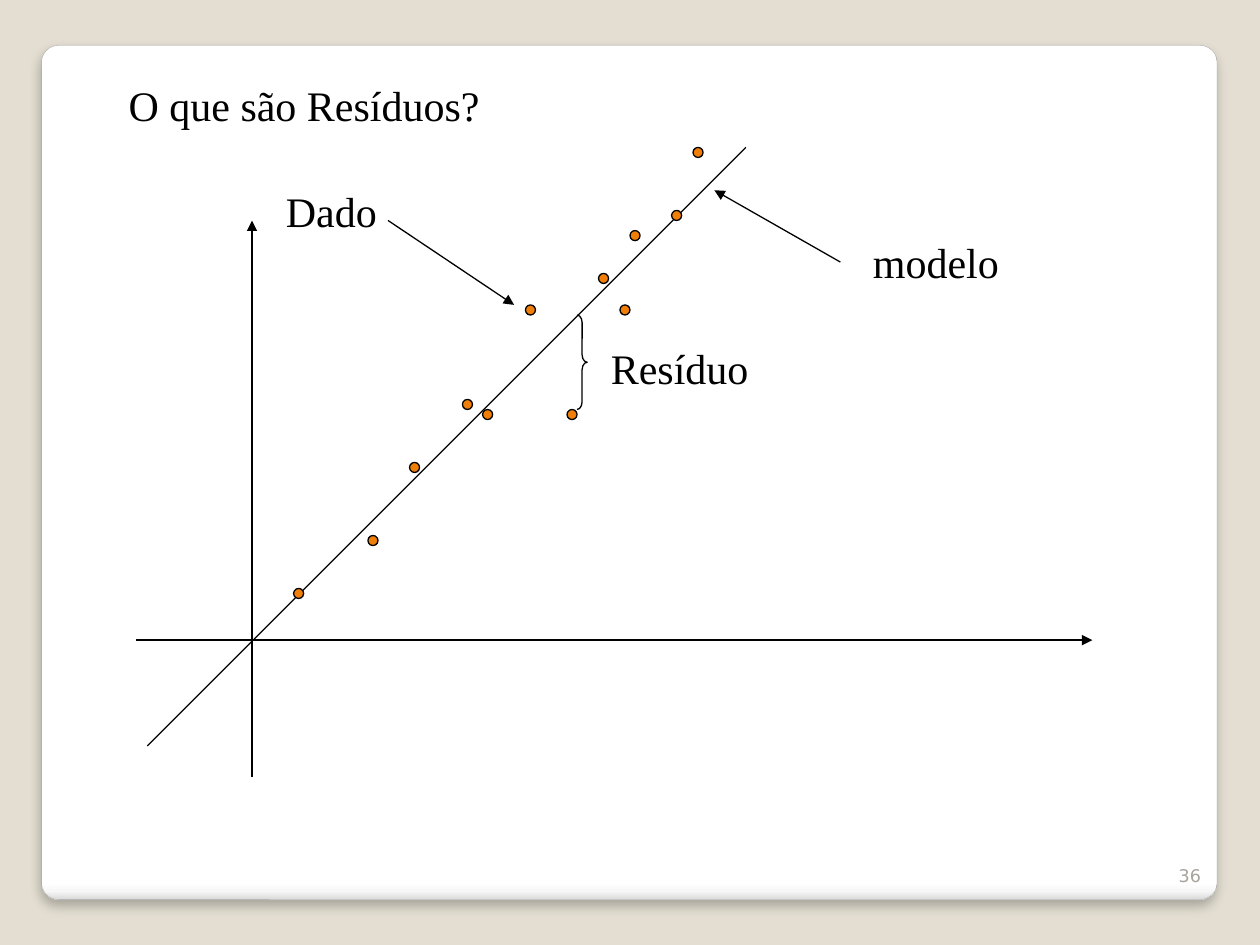
import dataclasses

import lxml.etree
import pptx
import pptx.dml.color
import pptx.enum.shapes
import pptx.enum.text
import pptx.oxml
import pptx.oxml.ns
import pptx.util

Inches = pptx.util.Inches
Pt = pptx.util.Pt
RGB = pptx.dml.color.RGBColor.from_string
SHAPE = pptx.enum.shapes.MSO_SHAPE
ALIGN = pptx.enum.text.PP_ALIGN
ANCHOR = pptx.enum.text.MSO_ANCHOR
qn = pptx.oxml.ns.qn


@dataclasses.dataclass(frozen=True)
class Theme:
    background: str = "E3DED1"
    card_border: str = "A4A4A4"
    card_stops: tuple = ((0, "FFFFFF"), (98, "FFFFFF"), (99, "F7F7F7"), (100, "DADADA"))
    ink: str = "000000"
    muted: str = "A8A49B"
    point: str = "F07F09"
    font: str = "Times New Roman"
    number_font: str = "DejaVu Sans"
    text_size: float = 24
    number_size: float = 10
    line_width: float = 0.75


class SlideBuilder:
    def __init__(self, prs, theme):
        self.theme = theme
        self.s = prs.slides.add_slide(prs.slide_layouts[5])
        fill = self.s.background.fill
        fill.solid()
        fill.fore_color.rgb = RGB(theme.background)

    def outline(self, line, color=None, width=None):
        line.color.rgb = RGB(color or self.theme.ink)
        line.width = Pt(width or self.theme.line_width)

    def shape(self, kind, x, y, w, h, color=None):
        sp = self.s.shapes.add_shape(kind, Inches(x), Inches(y), Inches(w), Inches(h))
        sp.shadow.inherit = False
        if color:
            sp.fill.solid()
            sp.fill.fore_color.rgb = RGB(color)
        else:
            sp.fill.background()
        self.outline(sp.line)
        return sp

    def card(self, x, y, w, h):
        """Rounded panel with a shaded lower edge and soft shadow, behind all else."""
        sp = self.shape(SHAPE.ROUNDED_RECTANGLE, x, y, w, h)
        sp.adjustments[0] = 0.02
        self.outline(sp.line, self.theme.card_border, 0.16)
        sp.fill.gradient()
        sp.fill.gradient_angle = 270
        props = sp._element.spPr
        stops = props.find(".//" + qn("a:gsLst"))
        for old in list(stops):
            stops.remove(old)
        for percent, color in self.theme.card_stops:
            stop = lxml.etree.SubElement(stops, qn("a:gs"), pos=str(percent * 1000))
            lxml.etree.SubElement(stop, qn("a:srgbClr"), val=color)
        shadow = lxml.etree.SubElement(
            props.find(qn("a:effectLst")), qn("a:outerShdw"),
            blurRad=str(Pt(6)), dist=str(Pt(4)), dir="5400000", rotWithShape="0")
        tint = lxml.etree.SubElement(shadow, qn("a:srgbClr"), val=self.theme.ink)
        lxml.etree.SubElement(tint, qn("a:alpha"), val="25000")
        self.s.shapes._spTree.insert(2, sp._element)

    def set_text(self, sp, text, font=None, size=None, color=None,
                 align=ALIGN.LEFT, anchor=ANCHOR.TOP):
        tf = sp.text_frame
        tf.word_wrap = True
        tf.auto_size = pptx.enum.text.MSO_AUTO_SIZE.NONE
        tf.vertical_anchor = anchor
        p = tf.paragraphs[0]
        p.text = text
        p.alignment = align
        p.font.name = font or self.theme.font
        p.font.size = Pt(size or self.theme.text_size)
        p.font.color.rgb = RGB(color or self.theme.ink)

    def title(self, text, x, y, w, h):
        sp = self.s.shapes.title
        sp.left, sp.top, sp.width, sp.height = map(Inches, (x, y, w, h))
        self.set_text(sp, text)

    def label(self, text, x, y, w=1.92, h=0.5, **style):
        sp = self.s.shapes.add_textbox(Inches(x), Inches(y), Inches(w), Inches(h))
        self.set_text(sp, text, **style)

    def line(self, start, end, arrow=False):
        cn = self.s.shapes.add_connector(
            pptx.enum.shapes.MSO_CONNECTOR.STRAIGHT, *map(Inches, (*start, *end)))
        self.outline(cn.line)
        props = cn._element.spPr
        if arrow:
            lxml.etree.SubElement(props.find(qn("a:ln")), qn("a:tailEnd"), type="triangle")
        lxml.etree.SubElement(props, qn("a:effectLst"))

    def point(self, x, y, size=0.08):
        self.shape(SHAPE.OVAL, x, y, size, size, self.theme.point)

    def brace(self, x, y, w, h):
        sp = self.shape(SHAPE.RIGHT_BRACE, x, y, w, h)
        sp.adjustments[0] = 0.75


DATA_POINTS = [
    (2.33, 4.67), (2.92, 4.25), (3.25, 3.67), (3.67, 3.17), (3.83, 3.25), (4.17, 2.42),
    (4.5, 3.25), (4.75, 2.17), (4.92, 2.42), (5, 1.83), (5.33, 1.67), (5.5, 1.17),
]


def main():
    prs = pptx.Presentation()
    prs.slide_width, prs.slide_height = Inches(10), Inches(7.5)
    theme = Theme()
    b = SlideBuilder(prs, theme)

    b.card(0.33, 0.36, 9.33, 6.78)
    b.title("O que são Resíduos?", 0.92, 0.58, 8.33, 0.5)
    b.label("36", 9.13, 6.68, 0.5, 0.4, font=theme.number_font, size=theme.number_size,
            color=theme.muted, align=ALIGN.RIGHT, anchor=ANCHOR.BOTTOM)

    # Axes and fitted model
    b.line((2, 6.17), (2, 1.75), arrow=True)
    b.line((1.08, 5.08), (8.67, 5.08), arrow=True)
    b.line((1.17, 5.92), (5.92, 1.17))

    for x, y in DATA_POINTS:
        b.point(x, y)

    # Annotations
    b.brace(4.58, 2.5, 0.08, 0.75)
    b.label("Resíduo", 4.75, 2.67)
    b.label("Dado", 2.17, 1.42)
    b.line((3.08, 1.75), (4.08, 2.42), arrow=True)
    b.label("modelo", 6.83, 1.83)
    b.line((6.67, 2.08), (5.67, 1.51), arrow=True)

    prs.save("out.pptx")


if __name__ == "__main__":
    main()
